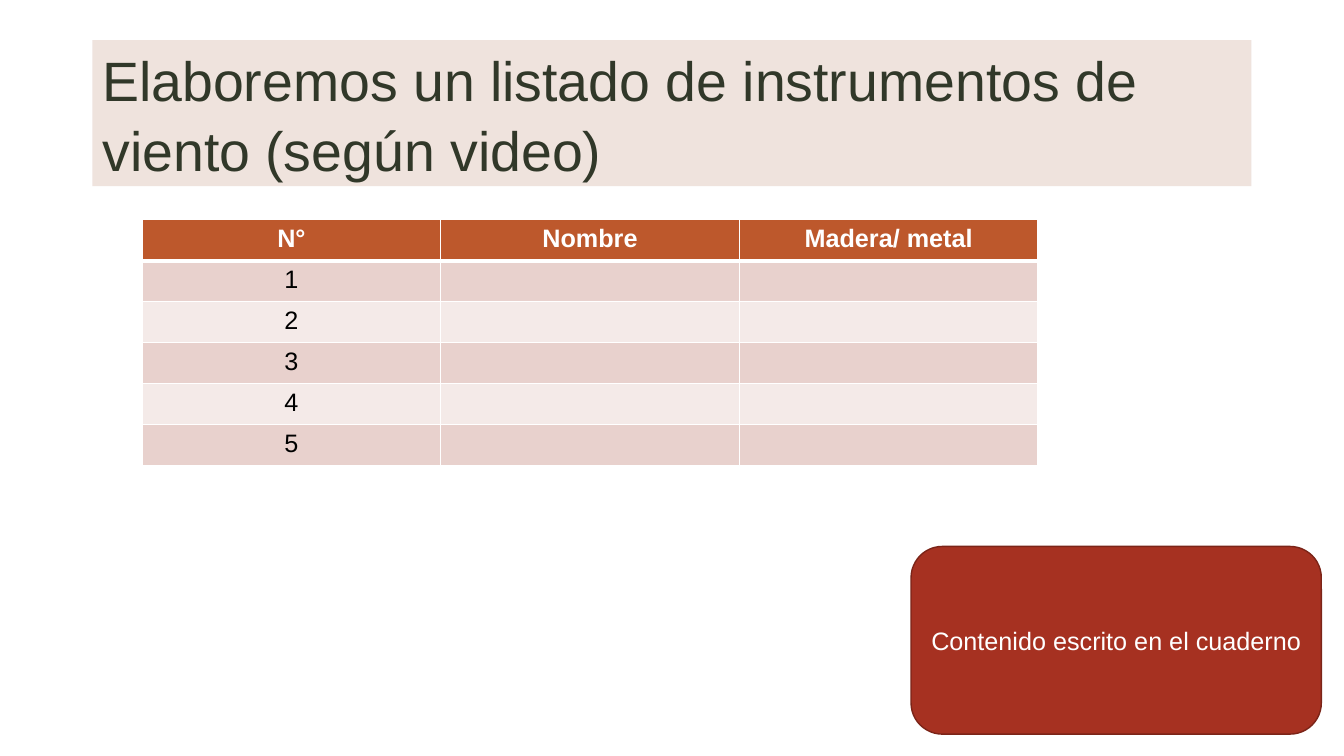
from lxml import etree
from pptx import Presentation
from pptx.dml.color import RGBColor
from pptx.enum.shapes import MSO_SHAPE
from pptx.enum.text import MSO_ANCHOR, PP_ALIGN
from pptx.oxml.ns import qn
from pptx.util import Cm, Pt

RECT, ROUNDED = MSO_SHAPE.RECTANGLE, MSO_SHAPE.ROUNDED_RECTANGLE
LEFT, CENTER = PP_ALIGN.LEFT, PP_ALIGN.CENTER
MIDDLE = MSO_ANCHOR.MIDDLE
WHITE = "FFFFFF"
HEADERS = ["N°", "Nombre", "Madera/ metal"]
ROW_COUNT = 5


def rgb(value):
    return RGBColor.from_string(value)


def write(tf, text, size=18, color=WHITE, bold=False, align=CENTER, spacing=1.0):
    tf.word_wrap = True
    p = tf.paragraphs[0]
    p.alignment = align
    p.line_spacing = spacing
    r = p.add_run()
    r.text = text
    r.font.name = "Arial"
    r.font.size = Pt(size)
    r.font.bold = bold
    r.font.color.rgb = rgb(color)


def add_panel(s, kind, box, fill):
    sp = s.shapes.add_shape(kind, *map(Cm, box))
    sp.shadow.inherit = False
    sp.fill.solid()
    sp.fill.fore_color.rgb = rgb(fill)
    sp.text_frame.vertical_anchor = MIDDLE
    return sp


def add_title(s, box):
    sp = add_panel(s, RECT, box, "EBDCD5")
    sp.line.fill.background()
    color = sp.fill._xPr.find(qn("a:solidFill"))[0]
    etree.SubElement(color, qn("a:alpha"), val="80000")
    write(sp.text_frame, "Elaboremos un listado de instrumentos de viento (según video)",
          size=39.6, color="313829", align=LEFT, spacing=1.04)


def add_note(s, box):
    sp = add_panel(s, ROUNDED, box, "A63121")
    sp.line.color.rgb = rgb("7B2418")
    sp.line.width = Pt(1)
    tf = sp.text_frame
    tf.margin_left = tf.margin_right = Cm(0.2)
    write(tf, "Contenido escrito en el cuaderno")


def set_borders(cell, **widths):
    tcPr = cell._tc.get_or_add_tcPr()
    for side in "LRTB":
        ln = etree.SubElement(tcPr, qn(f"a:ln{side}"), w=str(Pt(widths.get(side, 1))))
        fill = etree.SubElement(ln, qn("a:solidFill"))
        etree.SubElement(fill, qn("a:srgbClr"), val=WHITE)


def style_cell(cell, fill, **borders):
    set_borders(cell, **borders)
    cell.fill.solid()
    cell.fill.fore_color.rgb = rgb(fill)


def add_instrument_table(s, box):
    table = s.shapes.add_table(ROW_COUNT + 1, len(HEADERS), *map(Cm, box)).table
    for cell, text in zip(table.rows[0].cells, HEADERS):
        style_cell(cell, "BD582C", B=3)
        write(cell.text_frame, text, bold=True)
    for number in range(1, ROW_COUNT + 1):
        fill = "E8D1CD" if number % 2 else "F4EAE8"
        top = 3 if number == 1 else 1
        for cell in table.rows[number].cells:
            style_cell(cell, fill, T=top)
        write(table.cell(number, 0).text_frame, str(number), color="000000")


def main():
    prs = Presentation()
    prs.slide_width, prs.slide_height = Cm(33.87), Cm(19.05)
    s = prs.slides.add_slide(prs.slide_layouts[6])
    add_title(s, (2.33, 1.01, 29.21, 3.68))
    add_note(s, (22.96, 13.77, 10.34, 4.73))
    add_instrument_table(s, (3.58, 5.54, 22.58, 6.18))
    prs.save("out.pptx")


if __name__ == "__main__":
    main()
